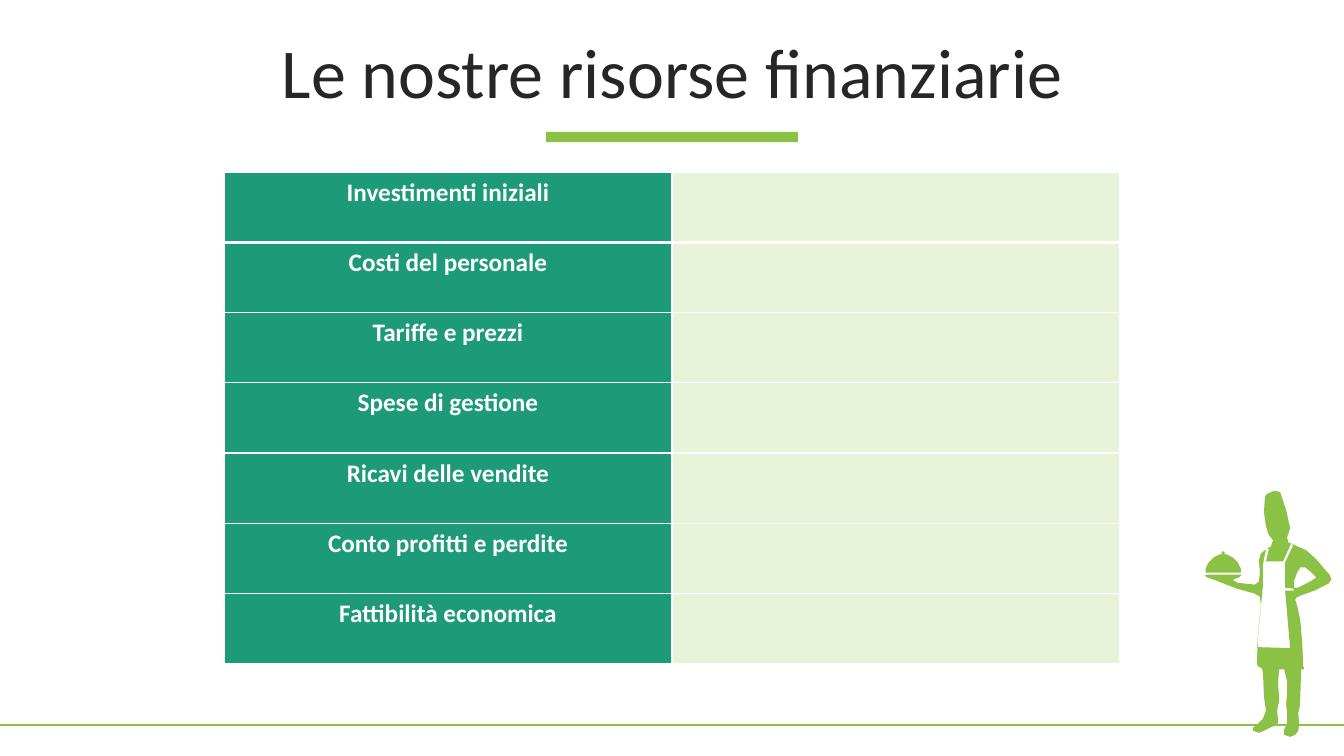
from dataclasses import dataclass

from lxml.etree import SubElement
from pptx import Presentation
from pptx.dml.color import RGBColor
from pptx.enum.shapes import MSO_CONNECTOR, MSO_SHAPE
from pptx.enum.text import MSO_ANCHOR, MSO_AUTO_SIZE, PP_ALIGN
from pptx.oxml import parse_xml
from pptx.oxml.ns import nsdecls, qn
from pptx.slide import Slide
from pptx.table import _Cell
from pptx.text.text import _Paragraph
from pptx.util import Pt

GREEN = RGBColor(0x8B, 0xC1, 0x45)
TEAL = RGBColor(0x1D, 0x9A, 0x78)
PALE_GREEN = RGBColor(0xE8, 0xF3, 0xDA)
WHITE = RGBColor(0xFF, 0xFF, 0xFF)
DARK_GREY = RGBColor(0x26, 0x26, 0x26)
FONT = "Calibri"
OUTLINE_UNIT = Pt(0.72)
ROW_HEIGHT = 50.15

Contour = list[tuple[int, int]]


@dataclass(frozen=True)
class Silhouette:
    """A filled outline and its openings, counted in OUTLINE_UNIT steps."""

    color: RGBColor
    contours: list[Contour]


BODY = [
    (1198, 570), (1232, 570), (1229, 573), (1223, 575), (1227, 578), (1235, 579),
    (1245, 580), (1249, 577), (1250, 568), (1249, 556), (1251, 549), (1256, 545),
    (1261, 542), (1263, 536), (1259, 531), (1258, 529), (1256, 522), (1254, 508),
    (1255, 493), (1257, 490), (1264, 487), (1270, 488), (1273, 497), (1276, 506),
    (1278, 515), (1280, 524), (1277, 533), (1278, 538), (1285, 541), (1296, 546),
    (1305, 554), (1319, 570), (1321, 575), (1318, 579), (1304, 586), (1290, 591),
    (1286, 593), (1285, 595), (1287, 601), (1290, 615), (1292, 638), (1293, 661),
    (1294, 664), (1291, 664), (1290, 692), (1290, 698), (1288, 708), (1289, 718),
    (1288, 725), (1285, 729), (1280, 731), (1274, 729), (1274, 724), (1277, 718),
    (1277, 708), (1276, 699), (1277, 687), (1277, 676), (1274, 664), (1269, 664),
    (1268, 678), (1269, 691), (1269, 696), (1268, 700), (1267, 706), (1268, 713),
    (1268, 717), (1266, 720), (1262, 721), (1256, 724), (1249, 727), (1243, 725),
    (1243, 722), (1246, 720), (1253, 713), (1256, 705), (1254, 691), (1253, 667),
    (1252, 663), (1248, 661), (1247, 658), (1248, 630), (1251, 600), (1250, 592),
    (1245, 589), (1227, 584), (1209, 577), (1204, 575), (1198, 573), (1195, 571),
]
ARM_OPENING = [
    (1284, 583), (1288, 583), (1298, 578), (1306, 573), (1300, 567), (1295, 563),
    (1290, 563), (1287, 568), (1284, 576),
]
APRON_OPENING = [
    (1281, 539), (1273, 557), (1256, 557), (1259, 544), (1256, 545), (1253, 560),
    (1253, 581), (1250, 612), (1247, 642), (1280, 643), (1275, 586), (1284, 586),
    (1283, 584), (1275, 583), (1275, 558), (1283, 541),
]
DISH_COVER = [
    (1214, 547), (1213, 547), (1212, 548), (1212, 550), (1210, 550), (1204, 553),
    (1199, 558), (1196, 564), (1196, 568), (1231, 568), (1231, 564), (1228, 558),
    (1223, 553), (1217, 550), (1215, 550), (1215, 548),
]
WAITER = [
    Silhouette(GREEN, [BODY, ARM_OPENING, APRON_OPENING]),
    Silhouette(GREEN, [DISH_COVER]),
]
RESOURCES = [
    "Investimenti iniziali",
    "Costi del personale",
    "Tariffe e prezzi",
    "Spese di gestione",
    "Ricavi delle vendite",
    "Conto profitti e perdite",
    "Fattibilità economica",
]


def format_text(paragraph: _Paragraph, size: float, color: RGBColor, bold: bool) -> None:
    """Centre a paragraph and format its runs."""
    paragraph.alignment = PP_ALIGN.CENTER
    for run in paragraph.runs:
        run.font.name = FONT
        run.font.size = Pt(size)
        run.font.bold = bold
        run.font.color.rgb = color


def add_title(slide: Slide) -> None:
    """Place and format the title placeholder."""
    title = slide.shapes.title
    title.left, title.top, title.width, title.height = Pt(24.5), Pt(27.4), Pt(911.5), Pt(56.9)
    text_frame = title.text_frame
    text_frame.text = "Le nostre risorse finanziarie"
    text_frame.auto_size = MSO_AUTO_SIZE.NONE
    text_frame.vertical_anchor = MSO_ANCHOR.MIDDLE
    paragraph = text_frame.paragraphs[0]
    paragraph.line_spacing = 0.8
    paragraph.space_before = Pt(10)
    format_text(paragraph, 50, DARK_GREY, False)


def add_rules(slide: Slide) -> None:
    """Add the bar under the title and the ground line."""
    bar = slide.shapes.add_shape(MSO_SHAPE.RECTANGLE, Pt(390), Pt(94.3), Pt(180), Pt(7.2))
    bar.shadow.inherit = False
    bar.fill.solid()
    bar.fill.fore_color.rgb = GREEN
    bar.line.fill.background()
    ground = slide.shapes.add_connector(
        MSO_CONNECTOR.STRAIGHT, Pt(0), Pt(518.2), Pt(960), Pt(518.2)
    )
    ground.line.color.rgb = GREEN
    ground.line.width = Pt(1.5)
    SubElement(ground._element.spPr, qn("a:effectLst"))


def add_silhouette(slide: Slide, silhouette: Silhouette) -> None:
    """Draw one filled outline with its openings."""
    first, *openings = silhouette.contours
    builder = slide.shapes.build_freeform(*first[0], scale=OUTLINE_UNIT)
    builder.add_line_segments(first[1:], close=True)
    for opening in openings:
        builder.move_to(*opening[0])
        builder.add_line_segments(opening[1:], close=True)
    shape = builder.convert_to_shape()
    shape.shadow.inherit = False
    shape.fill.solid()
    shape.fill.fore_color.rgb = silhouette.color
    shape.line.fill.background()


def format_cell(cell: _Cell, fill: RGBColor, top: float, bottom: float) -> None:
    """Fill a cell and give it white borders."""
    cell.fill.solid()
    cell.fill.fore_color.rgb = fill
    properties = cell._tc.get_or_add_tcPr()
    borders = {"lnL": 1, "lnR": 1, "lnT": top, "lnB": bottom}
    for position, (tag, width) in enumerate(borders.items()):
        border = parse_xml(
            f'<a:{tag} {nsdecls("a")} w="{Pt(width)}"><a:solidFill>'
            f'<a:srgbClr val="{WHITE}"/></a:solidFill></a:{tag}>'
        )
        properties.insert(position, border)


def add_resource_table(slide: Slide) -> None:
    """Add the table of financial resources with an open second column."""
    frame = slide.shapes.add_table(
        len(RESOURCES), 2, Pt(160), Pt(123), Pt(640), Pt(ROW_HEIGHT * len(RESOURCES))
    )
    table = frame.table
    table.first_row = False
    table.horz_banding = False
    for index, resource in enumerate(RESOURCES):
        top = 3 if index == 1 else 1
        bottom = 3 if index == 0 else 1
        label, value = table.cell(index, 0), table.cell(index, 1)
        label.text_frame.text = resource
        format_text(label.text_frame.paragraphs[0], 18, WHITE, True)
        format_cell(label, TEAL, top, bottom)
        format_cell(value, PALE_GREEN, top, bottom)


def main() -> None:
    """Build and save the presentation."""
    presentation = Presentation()
    presentation.slide_width, presentation.slide_height = Pt(960), Pt(540)
    slide = presentation.slides.add_slide(presentation.slide_layouts[5])
    add_title(slide)
    add_rules(slide)
    for silhouette in WAITER:
        add_silhouette(slide, silhouette)
    add_resource_table(slide)
    presentation.save("out.pptx")


if __name__ == "__main__":
    main()
